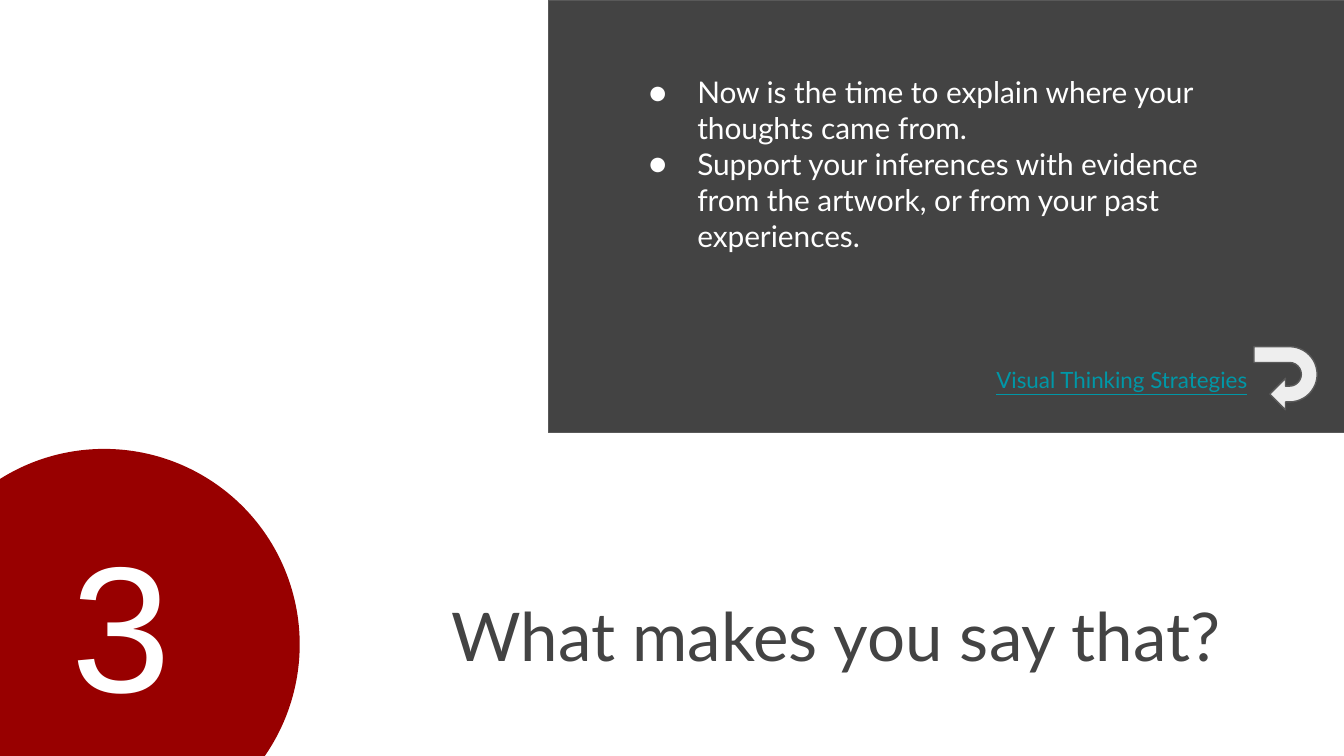
from lxml import etree
from pptx import Presentation
from pptx import util as u
from pptx.dml.color import RGBColor
from pptx.enum import shapes, text
from pptx.oxml.ns import qn

PX = 4572  # 200 px to the inch
WHITE = RGBColor(0xFF, 0xFF, 0xFF)
PALE = RGBColor(0xEE, 0xEE, 0xEE)
CHARCOAL = RGBColor(0x43, 0x43, 0x43)
EDGE = RGBColor(0x59, 0x59, 0x59)
RED = RGBColor(0x98, 0x00, 0x00)
TEAL = RGBColor(0x00, 0x97, 0xA7)

POINTS = [
    "Now is the time to explain where your thoughts came from.",
    "Support your inferences with evidence from the artwork, "
    "or from your past experiences.",
]


def px(*lengths):
    return [u.Emu(length * PX) for length in lengths]


def add_figure(page, kind, box, fill, edge=None):
    figure = page.shapes.add_shape(kind, *px(*box))
    figure.shadow.inherit = False
    figure.fill.solid()
    figure.fill.fore_color.rgb = fill
    if edge is None:
        figure.line.fill.background()
    else:
        figure.line.color.rgb = edge
        figure.line.width = u.Pt(0.75)
    return figure


def add_bullet(para, size, font):
    props = para._p.get_or_add_pPr()
    props.set("marL", str(100 * PX))
    props.set("indent", str(-72 * PX))
    color = etree.SubElement(props, qn("a:buClr"))
    etree.SubElement(color, qn("a:srgbClr"), val=str(WHITE))
    etree.SubElement(props, qn("a:buSzPts"), val=str(size * 100))
    etree.SubElement(props, qn("a:buFont"), typeface=font)
    etree.SubElement(props, qn("a:buChar"), char="●")


def write(shape, lines, size, color, font="Lato", bulleted=False,
          underline=None):
    frame = shape.text_frame
    frame.word_wrap = True
    frame.auto_size = text.MSO_AUTO_SIZE.NONE
    frame.vertical_anchor = text.MSO_ANCHOR.TOP
    (frame.margin_left, frame.margin_top,
     frame.margin_right, frame.margin_bottom) = px(20, 20, 20, 20)
    frame.text = "\n".join(lines)
    for para in frame.paragraphs:
        para.alignment = text.PP_ALIGN.LEFT
        if bulleted:
            add_bullet(para, size, font)
        for span in para.runs:
            span.font.name = font
            span.font.size = u.Pt(size)
            span.font.color.rgb = color
            span.font.underline = underline


def add_text(page, box, lines, size, color, **style):
    write(page.shapes.add_textbox(*px(*box)), lines, size, color, **style)


def add_number(page, left, top, diameter):
    # Red disc running off the corner, with the question number
    add_figure(page, shapes.MSO_SHAPE.OVAL,
               (left, top, diameter, diameter), RED)
    add_text(page, (left + 223, top + 76, 428, 464), ["3"], 96, WHITE,
             font="Arial")


def add_panel(page, left, top, width, height):
    # Dark panel with the guidance
    add_figure(page, shapes.MSO_SHAPE.RECTANGLE,
               (left, top, width, height), CHARCOAL, EDGE)
    add_text(page, (left + 102, top + 90, 986, 464), POINTS, 16, WHITE,
             bulleted=True)
    # Return arrow and source
    arrow = add_figure(page, shapes.MSO_SHAPE.U_TURN_ARROW,
                       (left + 1050, top + 516, 94, 94), PALE, EDGE)
    arrow.rotation = 90
    for index, value in enumerate((0.25, 0.25, 0.25, 0.44, 0.75)):
        arrow.adjustments[index] = value
    add_text(page, (left + 647, top + 525, 480, 76),
             ["Visual Thinking Strategies"], 12, TEAL, underline=True)


def add_title(page, *box):
    title = page.shapes.title
    title.left, title.top, title.width, title.height = px(*box)
    write(title, ["What makes you say that?"], 36, CHARCOAL)


def main():
    deck = Presentation()
    deck.slide_width, deck.slide_height = px(2000, 1125)
    page = deck.slides.add_slide(deck.slide_layouts[5])
    page.background.fill.solid()
    page.background.fill.fore_color.rgb = WHITE
    add_number(page, -136, 668, 582)
    add_panel(page, 816, 0, 1188, 644)
    add_title(page, 652, 864, 1436, 174)
    deck.save("out.pptx")


if __name__ == "__main__":
    main()
